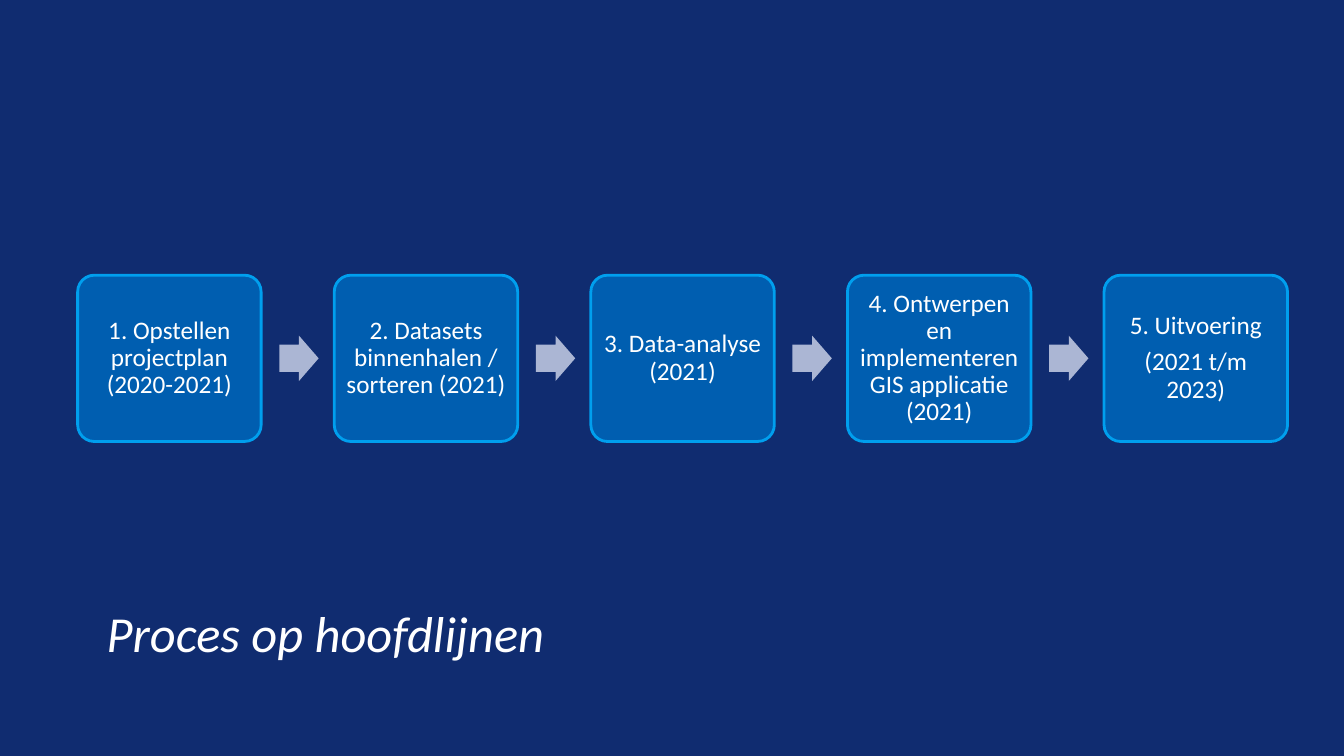
import pptx
import pptx.util
from pptx.dml.color import RGBColor
from pptx.enum.shapes import MSO_SHAPE
from pptx.enum.text import MSO_ANCHOR, PP_ALIGN
from pptx.util import Inches, Pt

NAVY = RGBColor(0x10, 0x2C, 0x70)
BLUE = RGBColor(0x00, 0x5E, 0xB0)
SKY = RGBColor(0x00, 0x9F, 0xEE)
LAVENDER = RGBColor(0xAB, 0xB6, 0xD4)
WHITE = RGBColor(0xFF, 0xFF, 0xFF)

STEPS = [
    ["1. Opstellen projectplan (2020-2021)"],
    ["2. Datasets binnenhalen / sorteren (2021)"],
    ["3. Data-analyse (2021)"],
    ["4. Ontwerpen en implementeren GIS applicatie (2021)"],
    ["5. Uitvoering", "(2021 t/m 2023)"],
]
FIRST_LEFT = 0.77
STEP_PITCH = 2.545
ARROW_OFFSET = 2.0


def set_font(paragraph, size, italic=False):
    font = paragraph.font
    font.name = "Calibri"
    font.size = Pt(size)
    font.italic = italic
    font.color.rgb = WHITE


def add_filled_shape(slide, preset, left, top, width, height, color, adjustments):
    shape = slide.shapes.add_shape(
        preset, Inches(left), Inches(top), Inches(width), Inches(height))
    for index, value in enumerate(adjustments):
        shape.adjustments[index] = value
    shape.shadow.inherit = False
    shape.fill.solid()
    shape.fill.fore_color.rgb = color
    shape.line.fill.background()
    return shape


def add_step(slide, left, lines):
    step = add_filled_shape(slide, MSO_SHAPE.ROUNDED_RECTANGLE,
                            left, 2.73, 1.82, 1.65, BLUE, [0.1])
    step.line.color.rgb = SKY
    step.line.width = Pt(2)

    frame = step.text_frame
    frame.word_wrap = True
    frame.vertical_anchor = MSO_ANCHOR.MIDDLE
    frame.margin_left = frame.margin_right = Inches(0.07)
    frame.margin_top = frame.margin_bottom = Inches(0.07)
    frame.text = "\n".join(lines)
    for paragraph in frame.paragraphs:
        paragraph.alignment = PP_ALIGN.CENTER
        paragraph.line_spacing = 0.9
        paragraph.space_after = Pt(6.3)
        set_font(paragraph, 18)


def add_arrow(slide, left):
    add_filled_shape(slide, MSO_SHAPE.RIGHT_ARROW,
                     left, 3.33, 0.39, 0.45, LAVENDER, [0.6, 0.5])


def add_title(slide, text):
    title = slide.shapes.add_textbox(
        Inches(0.96), Inches(5.92), Inches(11.18), Inches(1.06))
    frame = title.text_frame
    frame.word_wrap = True
    frame.text = text
    set_font(frame.paragraphs[0], 36, italic=True)


def main():
    presentation = pptx.Presentation()
    presentation.slide_width = Inches(13.33)
    presentation.slide_height = Inches(7.5)
    slide = presentation.slides.add_slide(presentation.slide_layouts[6])
    slide.background.fill.solid()
    slide.background.fill.fore_color.rgb = NAVY

    add_title(slide, "Proces op hoofdlijnen")
    for index, lines in enumerate(STEPS):
        left = FIRST_LEFT + index * STEP_PITCH
        add_step(slide, left, lines)
        if index < len(STEPS) - 1:
            add_arrow(slide, left + ARROW_OFFSET)

    presentation.save("out.pptx")


if __name__ == "__main__":
    main()
